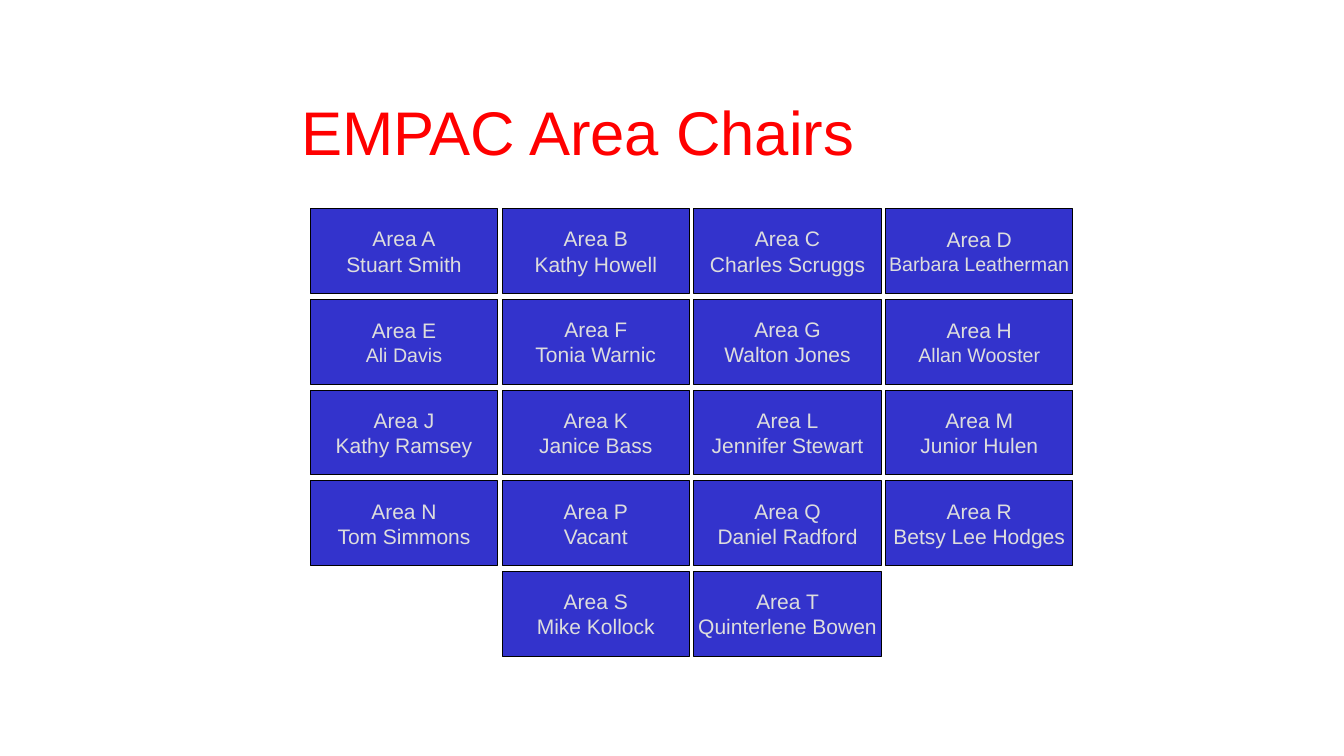
from pptx import Presentation
from pptx.dml.color import RGBColor
from pptx.enum.shapes import MSO_SHAPE
from pptx.enum.text import MSO_ANCHOR, PP_ALIGN
from pptx.util import Cm, Pt

CHAIRS = [
    [("A", "Stuart Smith", 15), ("B", "Kathy Howell", 15),
     ("C", "Charles Scruggs", 15), ("D", "Barbara Leatherman", 14)],
    [("E", "Ali Davis", 14), ("F", "Tonia Warnic", 15),
     ("G", "Walton Jones", 15), ("H", "Allan Wooster", 14)],
    [("J", "Kathy Ramsey", 15), ("K", "Janice Bass", 15),
     ("L", "Jennifer Stewart", 15), ("M", "Junior Hulen", 15)],
    [("N", "Tom Simmons", 15), ("P", "Vacant", 15),
     ("Q", "Daniel Radford", 15), ("R", "Betsy Lee Hodges", 15)],
    [("S", "Mike Kollock", 15), ("T", "Quinterlene Bowen", 15)],
]
COLUMNS = 4
GAP_X, GAP_Y = 0.11, 0.15


def color(value):
    return RGBColor.from_string(value)


def style(p, size, value):
    for r in p.runs:
        r.font.name = "Arial"
        r.font.size = Pt(size)
        r.font.color.rgb = color(value)


def add_title(slide, left, top, width, height):
    sp = slide.shapes.add_textbox(Cm(left), Cm(top), Cm(width), Cm(height))
    tf = sp.text_frame
    tf.word_wrap = True
    tf.vertical_anchor = MSO_ANCHOR.MIDDLE
    tf.text = "EMPAC Area Chairs"
    style(tf.paragraphs[0], 44, "FF0000")


def add_chair(slide, left, top, width, height, area, name, name_size):
    sp = slide.shapes.add_shape(
        MSO_SHAPE.RECTANGLE, Cm(left), Cm(top), Cm(width), Cm(height))
    sp.shadow.inherit = False
    sp.fill.solid()
    sp.fill.fore_color.rgb = color("3333CC")
    sp.line.color.rgb = color("000000")
    sp.line.width = Pt(0.75)
    tf = sp.text_frame
    tf.word_wrap = False
    tf.vertical_anchor = MSO_ANCHOR.MIDDLE
    tf.text = f"Area {area}\n{name}"
    for p, size in zip(tf.paragraphs, (15, name_size)):
        p.alignment = PP_ALIGN.CENTER
        style(p, size, "DDDDDD")


def add_chairs(slide, left, top, width, height):
    box_w = (width - (COLUMNS - 1) * GAP_X) / COLUMNS
    box_h = (height - (len(CHAIRS) - 1) * GAP_Y) / len(CHAIRS)
    for i, row in enumerate(CHAIRS):
        indent = (COLUMNS - len(row)) / 2
        for j, chair in enumerate(row):
            add_chair(slide, left + (indent + j) * (box_w + GAP_X),
                      top + i * (box_h + GAP_Y), box_w, box_h, *chair)


def main():
    prs = Presentation()
    prs.slide_width, prs.slide_height = Cm(33.87), Cm(19.05)
    slide = prs.slides.add_slide(prs.slide_layouts[6])
    add_title(slide, 7.34, 1.7, 23.98, 3.18)
    add_chairs(slide, 7.82, 5.26, 19.22, 11.28)
    prs.save("out.pptx")


if __name__ == "__main__":
    main()
